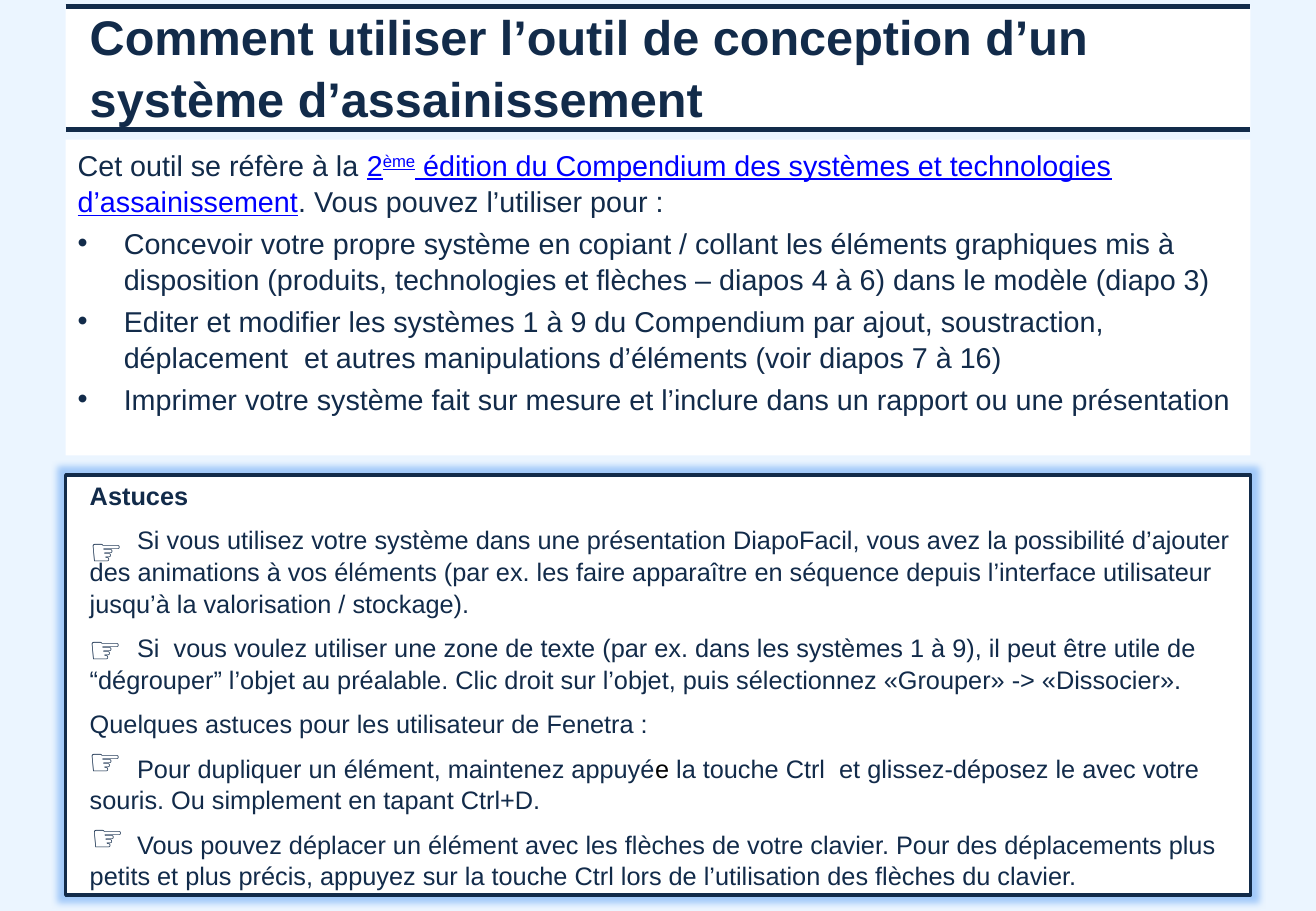
import pptx
import pptx.util
import pptx.dml.color
import pptx.enum.shapes
import pptx.enum.text
import lxml.etree

RGB = pptx.dml.color.RGBColor
NAVY = RGB(0x12, 0x2B, 0x4A)
PALE = RGB(0xEB, 0xF5, 0xFF)
WHITE = RGB(0xFF, 0xFF, 0xFF)
BLACK = RGB(0, 0, 0)
BLUE = RGB(0, 0, 0xFF)
GLOW = "8FBEF8"

LINK = {"color": BLUE, "underline": True}

# A paragraph is its (left, first line) indent in inches, its bullet,
# then its runs: plain text, or text with a format.
TITLE = [((0.1, 0), None, [
    "Comment utiliser l’outil de conception d’un système d’assainissement"])]
ITEM = ((0.38, -0.38), "•")
INTRO = [
    ((0, 0), None, [
        "Cet outil se réfère à la ", ("2", LINK),
        ("ème", {**LINK, "raised": 30}),
        (" édition du Compendium des systèmes et technologies "
         "d’assainissement", LINK),
        ". Vous pouvez l’utiliser pour :"]),
    (*ITEM, [
        "Concevoir votre propre système en copiant / collant les éléments "
        "graphiques mis à disposition (produits, technologies et flèches – "
        "diapos 4 à 6) dans le modèle (diapo 3)"]),
    (*ITEM, [
        "Editer et modifier les systèmes 1 à 9 du Compendium par ajout, "
        "soustraction,  déplacement  et autres manipulations d’éléments "
        "(voir diapos 7 à 16)"]),
    (*ITEM, [
        "Imprimer votre système fait sur mesure et l’inclure dans un rapport "
        "ou une présentation"]),
]
HEAD = ((0.1, 0), None)
TIP = ((0.1, 0.39), None)
TIPS = [
    (*HEAD, [("Astuces", {"bold": True})]),
    (*TIP, [
        "Si vous utilisez votre système dans une présentation DiapoFacil, "
        "vous avez la possibilité d’ajouter des animations à vos éléments "
        "(par ex. les faire apparaître en séquence depuis l’interface "
        "utilisateur jusqu’à la valorisation / stockage)."]),
    (*TIP, [
        "Si  vous voulez utiliser une zone de texte (par ex. dans les "
        "systèmes 1 à 9), il peut être utile de “dégrouper” l’objet au "
        "préalable. Clic droit sur l’objet, puis sélectionnez «Grouper» -> "
        "«Dissocier»."]),
    (*HEAD, ["Quelques astuces pour les utilisateur de Fenetra :"]),
    (*TIP, [
        "Pour dupliquer un élément, maintenez appuyé", ("e", {"color": BLACK}),
        " la touche Ctrl  et glissez-déposez le avec votre souris. Ou "
        "simplement en tapant Ctrl+D."]),
    (*TIP, [
        "Vous pouvez déplacer un élément avec les flèches de votre clavier. "
        "Pour des déplacements plus petits et plus précis, appuyez sur la "
        "touche Ctrl lors de l’utilisation des flèches du clavier."]),
]
HANDS = [(0.64, 4.3), (0.63, 5.11), (0.63, 6.03), (0.65, 6.66)]

# Slide grid, in inches
WIDE, HIGH = 10.83, 7.5
LEFT, SPAN = 0.54, 9.75
TOP, RULE = 0.05, 1.07
KINDS = pptx.enum.shapes.MSO_SHAPE
ANCHOR = pptx.enum.text.MSO_ANCHOR
inch, point = pptx.util.Inches, pptx.util.Pt


def tag(parent, name, **attrs):
    node = lxml.etree.SubElement(parent, pptx.oxml.ns.qn("a:" + name))
    for key, value in attrs.items():
        node.set(key, str(value))
    return node


def write(shape, paras, size, gap=0, first=0, bold=False, pitch=1.05, **frame):
    """Fill a shape with paragraphs; gap is the space before each, in points."""
    text = shape.text_frame
    for key, value in {"word_wrap": True, **frame}.items():
        setattr(text, key, value)
    for i, ((left, indent), bullet, runs) in enumerate(paras):
        para = text.add_paragraph() if i else text.paragraphs[0]
        style = {"alignment": pptx.enum.text.PP_ALIGN.LEFT,
                 "line_spacing": pitch,
                 "space_before": point(gap if i else first)}
        for key, value in style.items():
            setattr(para, key, value)
        props = para._p.get_or_add_pPr()
        props.set("marL", str(inch(left)))
        props.set("indent", str(inch(indent)))
        if bullet:
            tag(props, "buFont", typeface="Arial")
            tag(props, "buChar", char=bullet)
        for part in runs:
            words, look = (part, {}) if isinstance(part, str) else part
            look = {"name": "Arial", "size": point(size), "bold": bold,
                    "color": NAVY, **look}
            run = para.add_run()
            run.text = words
            run.font.color.rgb = look.pop("color")
            raised = look.pop("raised", 0)
            if raised:
                run.font._element.set("baseline", str(raised * 1000))
            for key, value in look.items():
                setattr(run.font, key, value)


def panel(slide, box, fill=WHITE, kind=KINDS.RECTANGLE):
    shape = slide.shapes.add_shape(kind, *map(inch, box))
    shape.shadow.inherit = False
    shape.fill.solid()
    shape.fill.fore_color.rgb = fill
    shape.line.fill.background()
    return shape


def rule(slide, y):
    line = slide.shapes.add_connector(
        pptx.enum.shapes.MSO_CONNECTOR.STRAIGHT,
        *map(inch, (LEFT, y, LEFT + SPAN, y)))
    line.line.color.rgb = NAVY
    line.line.width = point(3)
    tag(line._element.spPr, "effectLst")


def main():
    deck = pptx.Presentation()
    deck.slide_width, deck.slide_height = inch(WIDE), inch(HIGH)
    slide = deck.slides.add_slide(deck.slide_layouts[6])
    slide.background.fill.solid()
    slide.background.fill.fore_color.rgb = PALE

    panel(slide, (10.28, 0.11, 0.08, 1.62), PALE)
    intro = panel(slide, (LEFT, 1.15, SPAN, 2.6))
    write(intro, INTRO, 17, gap=3.4, first=3.4, vertical_anchor=ANCHOR.TOP)
    title = panel(slide, (LEFT, TOP, SPAN, RULE - TOP))
    write(title, TITLE, 28.8, bold=True, vertical_anchor=ANCHOR.MIDDLE,
          margin_top=0, margin_bottom=inch(0.04))
    for y in (TOP, RULE):
        rule(slide, y)

    tips = panel(slide, (LEFT, 3.91, SPAN, 3.46),
                 kind=KINDS.FLOWCHART_PROCESS)
    tips.line.color.rgb = NAVY
    tips.line.width = point(2)
    effect = tips._element.spPr.find(pptx.oxml.ns.qn("a:effectLst"))
    glow = tag(effect, "glow", rad=point(8))
    tag(tag(glow, "srgbClr", val=GLOW), "alpha", val=80000)
    write(tips, TIPS, 15, gap=7.3, vertical_anchor=ANCHOR.MIDDLE)

    for x, y in HANDS:
        hand = slide.shapes.add_textbox(*map(inch, (x, y, 0.45, 0.47)))
        write(hand, [((0, 0), None, ["☞"])], 22, bold=True, pitch=1,
              word_wrap=False)
    deck.save("out.pptx")


if __name__ == "__main__":
    main()
